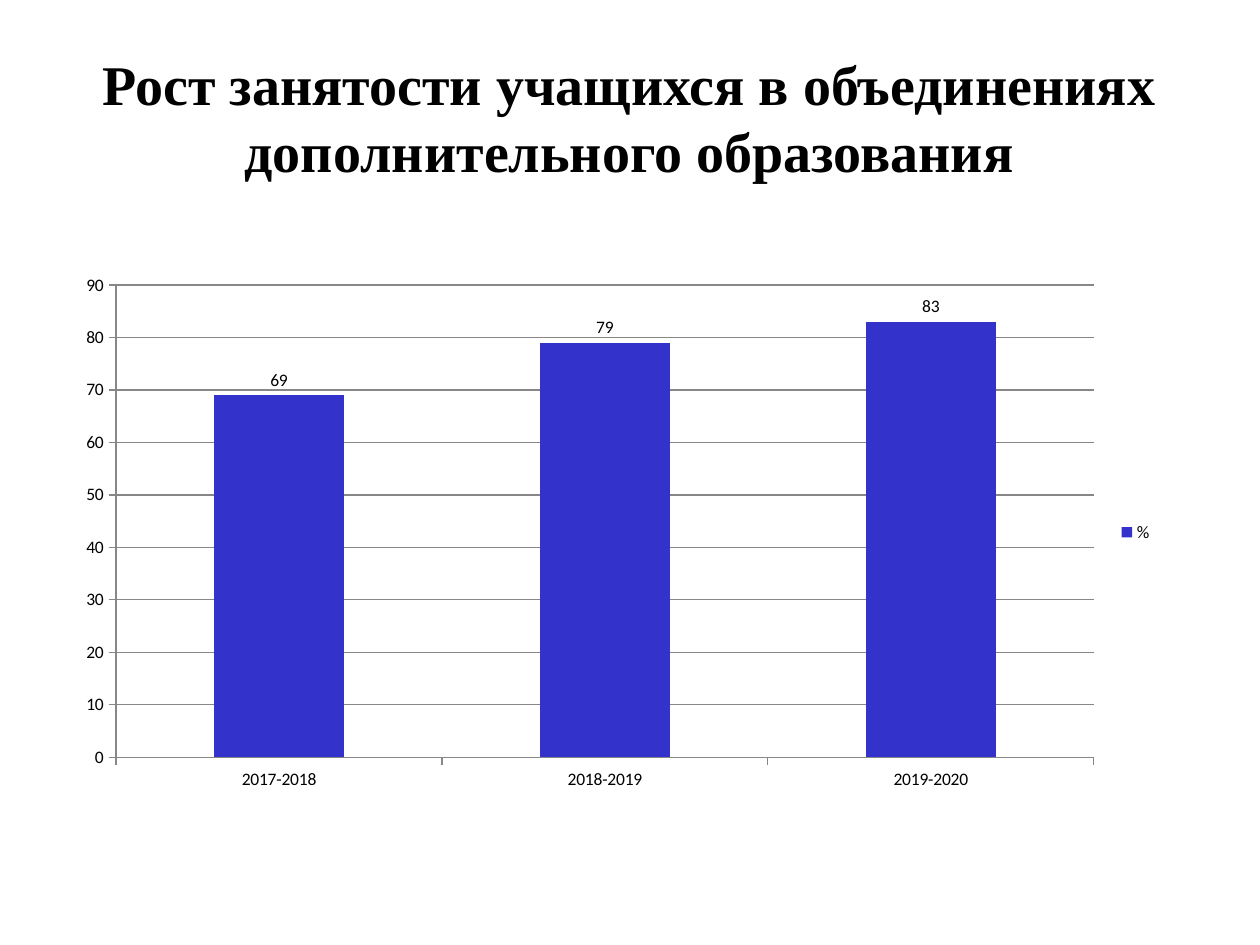
import pptx
import pptx.chart.data
import pptx.dml.color
import pptx.enum.chart
import pptx.enum.text
import pptx.util
from dataclasses import dataclass

Inches = pptx.util.Inches
Pt = pptx.util.Pt


@dataclass(frozen=True)
class Theme:
    background: str = "FFFFFF"
    text: str = "000000"
    bar: str = "3333CC"
    rule: str = "878787"
    title_font: str = "Times New Roman"
    chart_font: str = "Calibri"
    title_size: int = 32
    chart_size: int = 10
    rule_width: float = 0.75


class SlideBuilder:
    def __init__(self, slide, theme):
        self.slide = slide
        self.theme = theme

    def color(self, value):
        return pptx.dml.color.RGBColor.from_string(value)

    def fill(self, target, value):
        target.solid()
        target.fore_color.rgb = self.color(value)

    def style_font(self, font, name, size, bold=False):
        font.name = name
        font.size = Pt(size)
        font.bold = bold
        font.color.rgb = self.color(self.theme.text)

    def style_rule(self, line):
        line.width = Pt(self.theme.rule_width)
        line.color.rgb = self.color(self.theme.rule)

    def background(self):
        self.fill(self.slide.background.fill, self.theme.background)

    def title(self, wording, left, top, width, height):
        heading = self.slide.shapes.title
        heading.left, heading.top = Inches(left), Inches(top)
        heading.width, heading.height = Inches(width), Inches(height)
        frame = heading.text_frame
        frame.word_wrap = True
        frame.auto_size = pptx.enum.text.MSO_AUTO_SIZE.NONE
        frame.vertical_anchor = pptx.enum.text.MSO_ANCHOR.MIDDLE
        paragraph = frame.paragraphs[0]
        paragraph.alignment = pptx.enum.text.PP_ALIGN.CENTER
        run = paragraph.add_run()
        run.text = wording
        self.style_font(run.font, self.theme.title_font, self.theme.title_size, True)

    def column_chart(self, years, series_name, shares, left, top, width, height):
        attendance = pptx.chart.data.CategoryChartData(number_format="General")
        attendance.categories = years
        attendance.add_series(series_name, shares)
        chart = self.slide.shapes.add_chart(
            pptx.enum.chart.XL_CHART_TYPE.COLUMN_CLUSTERED,
            Inches(left), Inches(top), Inches(width), Inches(height), attendance,
        ).chart
        chart.has_title = False
        self.style_font(chart.font, self.theme.chart_font, self.theme.chart_size)

        chart.has_legend = True
        chart.legend.position = pptx.enum.chart.XL_LEGEND_POSITION.RIGHT
        chart.legend.include_in_layout = False

        for axis in (chart.category_axis, chart.value_axis):
            axis.major_tick_mark = pptx.enum.chart.XL_TICK_MARK.OUTSIDE
            axis.minor_tick_mark = pptx.enum.chart.XL_TICK_MARK.NONE
            self.style_rule(axis.format.line)
        percent_axis = chart.value_axis
        percent_axis.minimum_scale = 0
        percent_axis.maximum_scale = 90
        percent_axis.major_unit = 10
        percent_axis.has_major_gridlines = True
        self.style_rule(percent_axis.major_gridlines.format.line)

        plot = chart.plots[0]
        plot.gap_width = 150
        plot.vary_by_categories = False
        bars = plot.series[0]
        bars.invert_if_negative = False
        self.fill(bars.format.fill, self.theme.bar)
        labels = bars.data_labels
        labels.show_value = True
        labels.position = pptx.enum.chart.XL_LABEL_POSITION.OUTSIDE_END


def main():
    deck = pptx.Presentation()
    deck.slide_width, deck.slide_height = Inches(10), Inches(7.5)
    builder = SlideBuilder(deck.slides.add_slide(deck.slide_layouts[5]), Theme())
    builder.background()
    builder.title(
        "Рост занятости учащихся в объединениях дополнительного образования",
        0.5, 0.14, 8.99, 1.57,
    )
    builder.column_chart(
        ["2017-2018", "2018-2019", "2019-2020"], "%", [69, 79, 83],
        0.51, 2.1, 8.74, 4.25,
    )
    deck.save("out.pptx")


if __name__ == "__main__":
    main()
